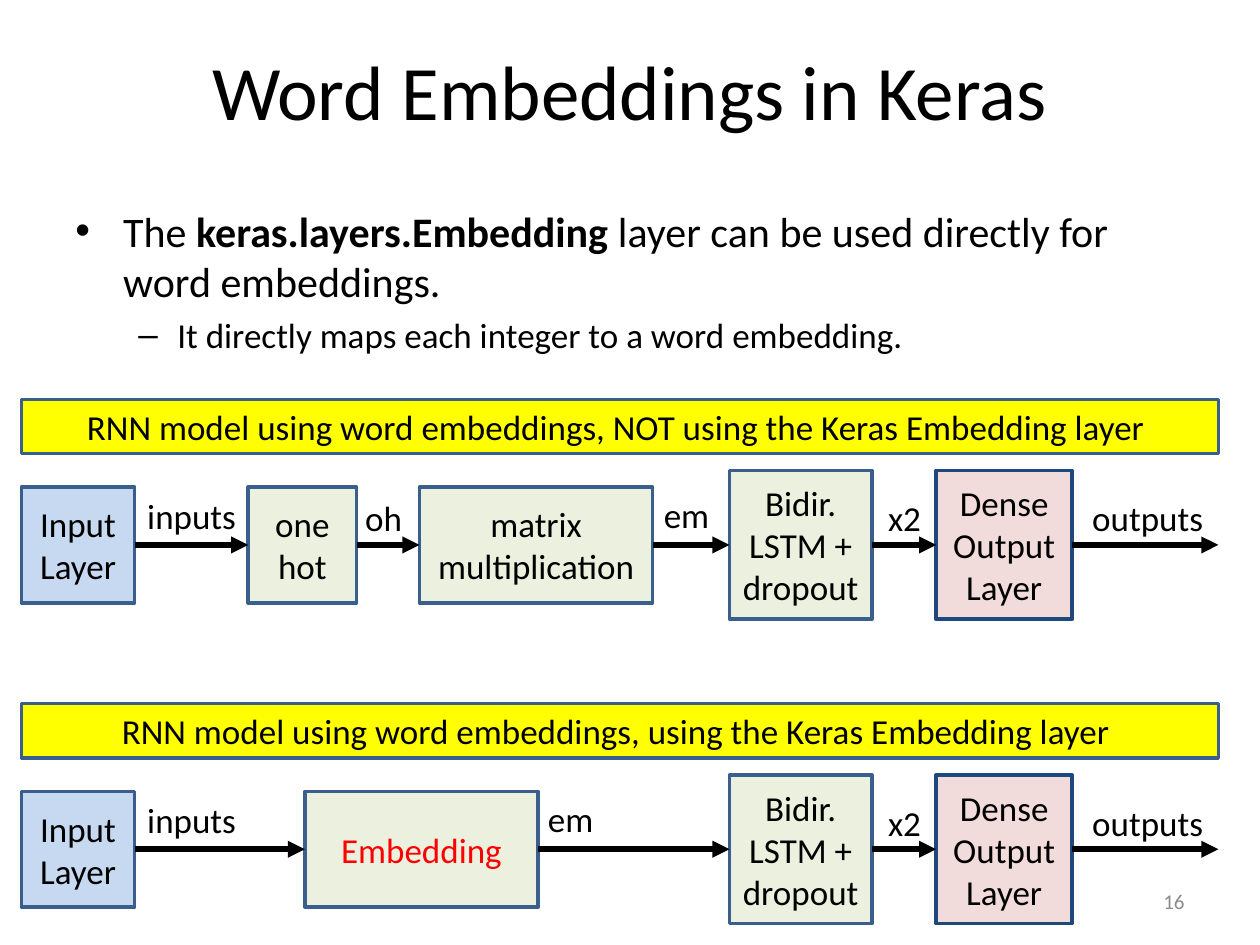
from dataclasses import dataclass
from itertools import pairwise

from lxml.etree import SubElement
from pptx import Presentation
from pptx.dml.color import RGBColor
from pptx.enum.shapes import MSO_CONNECTOR, MSO_SHAPE
from pptx.enum.text import MSO_ANCHOR, PP_ALIGN
from pptx.oxml.ns import qn
from pptx.util import Inches, Pt

COLORS = {
    "black": "000000", "red": "FF0000", "grey": "8C8C8C", "yellow": "FFFF00",
    "input": "C6D9F1", "hidden": "EBF1DE", "output": "F2DCDB",
    "edge": "3A5F8C", "dark edge": "1F497D",
}
FONT = "Calibri"
CELL = Inches(0.1)  # the slide is a grid of 100 columns and 75 rows
COLS, ROWS = 100, 75
LEFT, RIGHT = 1.7, 96.7
BANNER_H, LABEL_H = 4.3, 4.4
AXIS_DROP = 11.55  # rows from the top of a banner to its row of arrows


@dataclass(frozen=True)
class Box:
    paragraphs: tuple[str, ...]
    col: float
    width: float
    height: float = 9.2
    fill: str = "hidden"
    edge: str = "edge"
    color: str = "black"


@dataclass(frozen=True)
class Label:
    text: str
    col: float
    width: float
    rise: float = 4.3  # rows above the arrows


@dataclass(frozen=True)
class Model:
    row: float
    title: str
    middle: tuple[Box, ...]
    labels: tuple[Label, ...]


INPUT = Box(("Input Layer",), LEFT, 9, fill="input")
LSTM = Box(("Bidir.\vLSTM + dropout",), 57.9, 11.3, 11.8)
DENSE = Box(("Dense", "Output Layer"), 74.3, 10.8, 11.8, "output", "dark edge")
SHARED_LABELS = (
    Label("inputs", 10.7, 9.1, 4.5),
    Label("x2", 69.5, 4.6),
    Label("outputs", 85.7, 10.9),
)
MODELS = (
    Model(
        31.7,
        "RNN model using word embeddings, NOT using the Keras Embedding layer ",
        (Box(("one\vhot",), 19.7, 8.6), Box(("matrix multiplication",), 33.3, 18.5)),
        (Label("oh", 28, 5), Label("em", 51.7, 5.7, 4.6)),
    ),
    Model(
        55.85,
        "RNN model using word embeddings, using the Keras Embedding layer ",
        (Box(("Embedding",), 24.2, 18.5, color="red"),),
        (Label("em", 42.5, 5.7, 4.6),),
    ),
)


def grid(*cells: float) -> list[int]:
    return [round(c * CELL) for c in cells]


def rgb(name: str) -> RGBColor:
    return RGBColor.from_string(COLORS[name])


def add_text(p, text: str, *, size=20, color="black", bold=False, align=PP_ALIGN.LEFT):
    """Append text to a paragraph; a vertical tab breaks the line."""
    p.alignment = align
    for i, line in enumerate(text.split("\v")):
        if i:
            p.add_line_break()
        r = p.add_run()
        r.text = line
        r.font.name, r.font.size, r.font.bold = FONT, Pt(size), bold
        r.font.color.rgb = rgb(color)


def add_textbox(shapes, cells: tuple[float, ...], text="", *, wrap=True,
                anchor=MSO_ANCHOR.TOP, **fmt):
    tf = shapes.add_textbox(*grid(*cells)).text_frame
    tf.word_wrap = wrap
    tf.vertical_anchor = anchor
    if text:
        add_text(tf.paragraphs[0], text, **fmt)
    return tf


def add_box(shapes, box: Box, row: float) -> None:
    sp = shapes.add_shape(MSO_SHAPE.RECTANGLE, *grid(box.col, row, box.width, box.height))
    sp.shadow.inherit = False
    sp.fill.solid()
    sp.fill.fore_color.rgb = rgb(box.fill)
    sp.line.color.rgb = rgb(box.edge)
    sp.line.width = Pt(2)
    tf = sp.text_frame
    tf.word_wrap = True
    tf.vertical_anchor = MSO_ANCHOR.MIDDLE
    for i, text in enumerate(box.paragraphs):
        p = tf.add_paragraph() if i else tf.paragraphs[0]
        add_text(p, text, color=box.color, align=PP_ALIGN.CENTER)


def add_arrow(shapes, start: float, end: float, row: float) -> None:
    line = shapes.add_connector(MSO_CONNECTOR.STRAIGHT, *grid(start, row, end, row))
    line.line.color.rgb = rgb("black")
    line.line.width = Pt(3.25)
    SubElement(line.line._get_or_add_ln(), qn("a:tailEnd"), type="triangle")
    SubElement(line._element.spPr, qn("a:effectLst"))


def set_bullet(p, char: str, margin: float, hang: float, before: float) -> None:
    p.space_before = Pt(before)
    pPr = p._p.get_or_add_pPr()
    pPr.set("marL", str(Inches(margin)))
    pPr.set("indent", str(-Inches(hang)))
    SubElement(pPr, qn("a:buFont"), typeface="Arial")
    SubElement(pPr, qn("a:buChar"), char=char)


def add_model(s, model: Model) -> None:
    shapes = s.shapes.add_group_shape().shapes
    axis = model.row + AXIS_DROP
    boxes = (INPUT, *model.middle, LSTM, DENSE)
    for box in boxes:
        add_box(shapes, box, axis - box.height / 2)
    for a, b in pairwise(boxes):
        add_arrow(shapes, a.col + a.width, b.col, axis)
    add_arrow(shapes, DENSE.col + DENSE.width, RIGHT, axis)
    for label in (*SHARED_LABELS, *model.labels):
        cells = (label.col, axis - label.rise, label.width, LABEL_H)
        add_textbox(shapes, cells, label.text, wrap=False)
    banner = Box((model.title,), LEFT, RIGHT - LEFT, BANNER_H, "yellow")
    add_box(shapes, banner, model.row)


def add_bullets(s) -> None:
    tf = add_textbox(s.shapes, (5, 15.8, 90, 15))
    p = tf.paragraphs[0]
    add_text(p, "The ", size=24)
    add_text(p, "keras.layers.Embedding", size=24, bold=True)
    add_text(p, " layer can be used directly for word embeddings.", size=24)
    set_bullet(p, "•", 0.38, 0.38, 4.8)
    p = tf.add_paragraph()
    p.level = 1
    add_text(p, "It directly maps each integer to a word embedding.")
    set_bullet(p, "–", 0.81, 0.31, 4)


def main() -> None:
    prs = Presentation()
    prs.slide_width, prs.slide_height = grid(COLS, ROWS)
    s = prs.slides.add_slide(prs.slide_layouts[6])
    add_textbox(s.shapes, (5, 1.7, 90, 10.8), "Word Embeddings in Keras", size=44,
                anchor=MSO_ANCHOR.MIDDLE, align=PP_ALIGN.CENTER)
    add_bullets(s)
    add_textbox(s.shapes, (71.7, 69.5, 23.3, 4), "16", size=12, color="grey",
                anchor=MSO_ANCHOR.MIDDLE, align=PP_ALIGN.RIGHT)
    for model in MODELS:
        add_model(s, model)
    prs.save("out.pptx")


if __name__ == "__main__":
    main()
